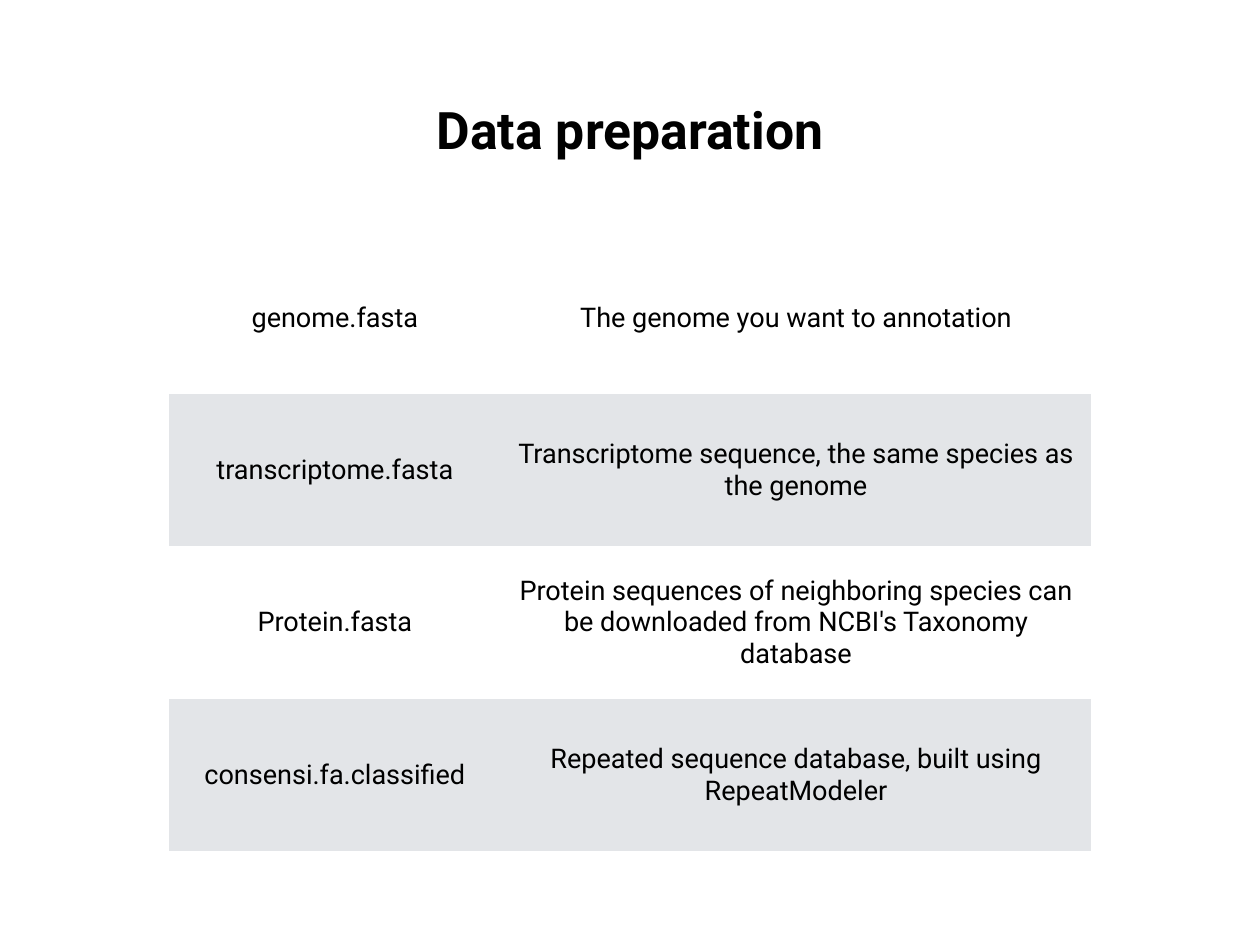
from dataclasses import dataclass

from pptx import Presentation
from pptx.dml.color import RGBColor
from pptx.enum.text import MSO_VERTICAL_ANCHOR as Anchor, PP_PARAGRAPH_ALIGNMENT as Align
from pptx.oxml.ns import qn
from pptx.util import Pt


@dataclass(frozen=True)
class Theme:
    font: str = "Roboto"
    text: str = "000000"
    bands: tuple = ("FFFFFF", "E3E5E8")
    title_size: int = 42
    cell_size: int = 22
    inset: int = 4


THEME = Theme()
PLAIN_TABLE_STYLE = "{2D5ABB26-0587-4C30-8999-92F81FD0307C}"
COLUMN_WIDTHS = (269.3, 480.2)
ROW_HEIGHT = 123.8
INPUT_FILES = (
    ("genome.fasta", "The genome you want to annotation"),
    ("transcriptome.fasta", "Transcriptome sequence, the same species as the genome"),
    ("Protein.fasta", "Protein sequences of neighboring species can be downloaded from NCBI's Taxonomy database"),
    ("consensi.fa.classified", "Repeated sequence database, built using RepeatModeler"),
)


def set_margins(holder):
    holder.margin_left = holder.margin_right = Pt(THEME.inset)
    holder.margin_top = holder.margin_bottom = Pt(THEME.inset)
    holder.vertical_anchor = Anchor.MIDDLE


def write_text(frame, text, size=THEME.cell_size, bold=False, align=Align.CENTER):
    frame.word_wrap = True
    paragraph = frame.paragraphs[0]
    paragraph.alignment = align
    run = paragraph.add_run()
    run.text = text
    run.font.name = THEME.font
    run.font.size = Pt(size)
    run.font.bold = bold
    run.font.color.rgb = RGBColor.from_string(THEME.text)


def add_title(slide, text, left, top, width, height):
    shape = slide.shapes.add_textbox(Pt(left), Pt(top), Pt(width), Pt(height))
    set_margins(shape.text_frame)
    write_text(shape.text_frame, text, size=THEME.title_size, bold=True)


def add_banded_table(slide, rows, left, top):
    width, height = sum(COLUMN_WIDTHS), ROW_HEIGHT * len(rows)
    table = slide.shapes.add_table(
        len(rows), len(COLUMN_WIDTHS), Pt(left), Pt(top), Pt(width), Pt(height)
    ).table
    table.first_row = table.horz_banding = False
    table._tbl.tblPr.find(qn("a:tableStyleId")).text = PLAIN_TABLE_STYLE
    for column, column_width in zip(table.columns, COLUMN_WIDTHS):
        column.width = Pt(column_width)
    for row_index, texts in enumerate(rows):
        table.rows[row_index].height = Pt(ROW_HEIGHT)
        band = THEME.bands[row_index % len(THEME.bands)]
        for column_index, text in enumerate(texts):
            cell = table.cell(row_index, column_index)
            cell.fill.solid()
            cell.fill.fore_color.rgb = RGBColor.from_string(band)
            set_margins(cell)
            write_text(cell.text_frame, text)


def main():
    presentation = Presentation()
    presentation.slide_width, presentation.slide_height = Pt(1024), Pt(768)
    slide = presentation.slides.add_slide(presentation.slide_layouts[6])
    add_title(slide, "Data preparation", 75, 20, 874, 170)
    add_banded_table(slide, INPUT_FILES, 137.5, 196.5)
    presentation.save("out.pptx")


if __name__ == "__main__":
    main()
